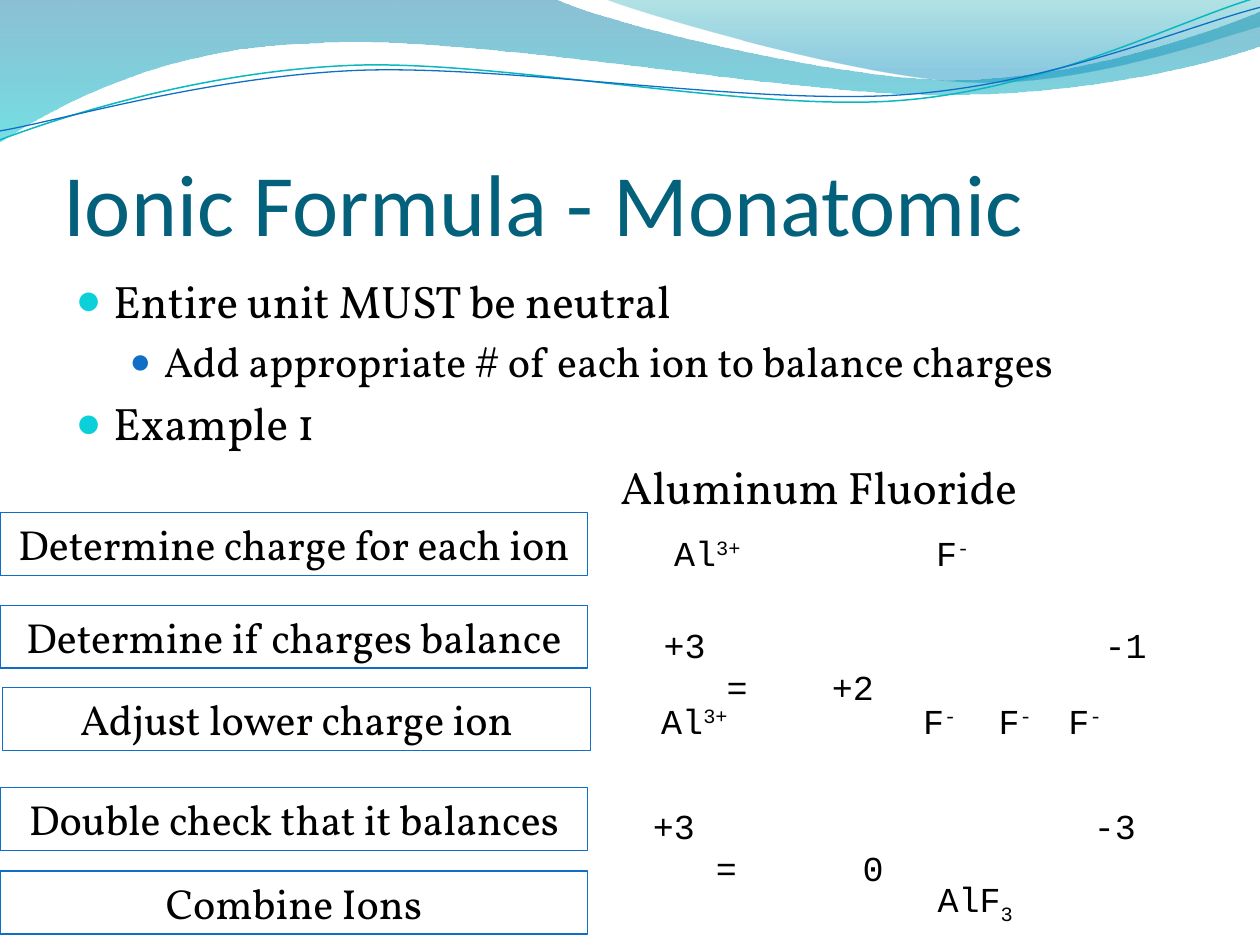
from lxml import etree
from pptx import Presentation
from pptx import util as u
from pptx.dml.color import RGBColor
from pptx.enum import shapes, text
from pptx.oxml.ns import qn

BODY_FONT, FORMULA_FONT = "Vollkorn", "Courier New"
BLACK, BLUE, TEAL, CYAN = "000000", "0F6FC6", "0AB8BF", "0BD0D9"
SUPER, SUB = 30000, -25000

# Wave outlines in cm: a start point, then one point per line or three per curve.
BROAD_WAVE = [
    [(0, 0)], [(11.18, -0.03)],
    [(12.09, 0.43), (16.87, 1.6), (19.25, 1.6)],
    [(21.67, 1.6), (24.33, 0.66), (25.4, 0.23)],
    [(25.43, 0.91)],
    [(24.97, 1.12), (22.1, 1.93), (18.95, 1.91)],
    [(15.8, 1.91), (9.7, 0.71), (6.53, 0.86)],
    [(3.28, 0.91), (1.17, 2.11), (-0.03, 2.87)],
]
RIGHT_WAVE = [
    [(12.17, -0.03)],
    [(12.93, 0.28), (17.32, 1.57), (19.53, 1.65)],
    [(21.74, 1.75), (24.41, 0.81), (25.4, 0.53)],
    [(25.4, 0)],
]
TEAL_STRAND = [
    [(0, 2.82)],
    [(1.22, 2.36), (4.01, 1.45), (7.04, 1.32)],
    [(10.03, 1.19), (15.06, 2.26), (18.11, 2.03)],
    [(21.16, 1.8), (23.83, 0.38), (25.35, -0.05)],
]
BLUE_STRAND = [
    [(0, 2.64)],
    [(1.19, 2.44), (4.17, 1.55), (7.19, 1.42)],
    [(10.24, 1.3), (15.16, 2.13), (18.21, 1.91)],
    [(21.23, 1.7), (23.9, 0.53), (25.4, 0.15)],
]


def color(value):
    return RGBColor.from_string(value)


def format_run(run, font, size, value=BLACK):
    run.font.name = font
    run.font.size = u.Pt(size)
    run.font.color.rgb = color(value)


def place(shape, left, top, width, height):
    shape.left, shape.top = u.Cm(left), u.Cm(top)
    shape.width, shape.height = u.Cm(width), u.Cm(height)


def bend(shape, segments):
    """Join the three lines of each curved segment into one cubic curve."""
    lines = iter(list(shape._element.iter(qn("a:lnTo"))))
    for segment in segments[1:]:
        group = [next(lines) for _ in segment]
        if len(group) == 3:
            curve = etree.Element(qn("a:cubicBezTo"))
            group[0].addprevious(curve)
            for line in group:
                curve.append(line[0])
                line.getparent().remove(line)


def add_outline(slide, segments, depth, close):
    """Add a freeform at the given depth, counted from the back."""
    start, *rest = [(u.Cm(x), u.Cm(y)) for segment in segments for x, y in segment]
    builder = slide.shapes.build_freeform(*start)
    builder.add_line_segments(rest, close=close)
    shape = builder.convert_to_shape()
    bend(shape, segments)
    shape.shadow.inherit = False
    slide.shapes._spTree.insert(2 + depth, shape._element)
    return shape


def add_wave(slide, segments, depth, stops):
    """Fill downwards with stops of (position, colour, opacity in percent)."""
    shape = add_outline(slide, segments, depth, close=True)
    shape.line.fill.background()
    shape.fill.gradient()
    shape.fill.gradient_angle = 270
    for stop, (position, value, _) in zip(shape.fill.gradient_stops, stops):
        stop.position = position
        stop.color.rgb = color(value)
    for element, (_, _, opacity) in zip(shape._element.iter(qn("a:srgbClr")), stops):
        etree.SubElement(element, qn("a:alpha"), val=str(opacity * 1000))


def add_strand(slide, segments, depth, value, width):
    shape = add_outline(slide, segments, depth, close=False)
    shape.fill.background()
    shape.line.color.rgb = color(value)
    shape.line.width = u.Pt(width)


def set_indent(paragraph, left, first=0):
    properties = paragraph._p.get_or_add_pPr()
    properties.set("marL", str(u.Cm(left)))
    properties.set("indent", str(u.Cm(first)))
    return properties


def set_bullet(paragraph, left, hanging, value, percent):
    properties = set_indent(paragraph, left, -hanging)
    bullet_color = etree.SubElement(properties, qn("a:buClr"))
    etree.SubElement(bullet_color, qn("a:srgbClr"), val=value)
    etree.SubElement(properties, qn("a:buSzPct"), val=str(percent * 1000))
    etree.SubElement(properties, qn("a:buChar"), char="●")


def set_tabs(paragraph, stops):
    tabs = etree.SubElement(paragraph._p.get_or_add_pPr(), qn("a:tabLst"))
    for stop in stops:
        etree.SubElement(tabs, qn("a:tab"), pos=str(u.Cm(stop)), algn="l")


def fill_title(title):
    place(title, 1.27, 1.95, 22.86, 3.18)
    frame = title.text_frame
    frame.text = "Ionic Formula - Monatomic"
    frame.vertical_anchor = text.MSO_ANCHOR.BOTTOM
    frame.margin_left = frame.margin_right = frame.margin_bottom = 0
    frame.paragraphs[0].alignment = text.PP_ALIGN.LEFT
    format_run(frame.paragraphs[0].runs[0], "Calibri", 50, "04617B")


def fill_body(body):
    place(body, 1.27, 5.37, 22.86, 12.19)
    lines = [("Entire unit MUST be neutral", 0),
             ("Add appropriate # of each ion to balance charges", 1),
             ("Example 1", 0), ("Aluminum Fluoride", 0)]
    body.text_frame.text = "\n".join(line for line, _ in lines)
    paragraphs = body.text_frame.paragraphs
    for paragraph, (_, level) in zip(paragraphs, lines):
        paragraph.level = level
        format_run(paragraph.runs[0], BODY_FONT, 24 if level else 26)
    for paragraph in paragraphs[:3]:
        if paragraph.level:
            set_bullet(paragraph, 1.78, 0.69, BLUE, 85)
        else:
            set_bullet(paragraph, 0.76, 0.76, CYAN, 95)
    compound = paragraphs[3]
    compound.alignment = text.PP_ALIGN.CENTER
    etree.SubElement(set_indent(compound, 7.62), qn("a:buNone"))


def add_step(slide, label, left, top):
    shape = slide.shapes.add_shape(shapes.MSO_SHAPE.RECTANGLE, u.Cm(left), u.Cm(top),
                                   u.Cm(11.85), u.Cm(1.27))
    shape.shadow.inherit = False
    shape.fill.background()
    shape.line.color.rgb = color(BLUE)
    shape.line.width = u.Pt(0.75)
    shape.text_frame.text = label
    shape.text_frame.word_wrap = True
    shape.text_frame.auto_size = text.MSO_AUTO_SIZE.SHAPE_TO_FIT_TEXT
    paragraph = shape.text_frame.paragraphs[0]
    paragraph.alignment = text.PP_ALIGN.CENTER
    format_run(paragraph.runs[0], BODY_FONT, 24)


def add_formula(slide, left, top, width, lines):
    """Write lines of (text, baseline) parts and return their paragraphs."""
    box = slide.shapes.add_textbox(u.Cm(left), u.Cm(top), u.Cm(width), u.Cm(1.12))
    frame = box.text_frame
    frame.word_wrap = True
    frame.auto_size = text.MSO_AUTO_SIZE.SHAPE_TO_FIT_TEXT
    for index, parts in enumerate(lines):
        paragraph = frame.add_paragraph() if index else frame.paragraphs[0]
        for content, baseline in parts:
            run = paragraph.add_run()
            run.text = content
            format_run(run, FORMULA_FONT, 20)
            if baseline:
                run._r.get_or_add_rPr().set("baseline", str(baseline))
    return frame.paragraphs


def add_balance(slide, left, top, negative, total, total_tab):
    charges, result = add_formula(slide, left, top, 11.43, [
        [(f"+3\t{negative}", 0)], [(f"\t=\t{total}", 0)]])
    set_tabs(charges, [8.89])
    set_tabs(result, [1.27, total_tab])


def main():
    presentation = Presentation()
    presentation.slide_width, presentation.slide_height = u.Cm(25.4), u.Cm(19.05)
    slide = presentation.slides.add_slide(presentation.slide_layouts[1])

    add_wave(slide, BROAD_WAVE, 0, [(0, "0074A1", 45), (1, "00C6CF", 55)])
    add_wave(slide, RIGHT_WAVE, 1, [(0, "00A1A9", 30), (0.8, "008BBF", 45)])
    add_strand(slide, TEAL_STRAND, 2, TEAL, 0.85)
    add_strand(slide, BLUE_STRAND, 3, BLUE, 0.75)
    fill_title(slide.shapes.title)
    fill_body(slide.placeholders[1])

    aluminum = [("Al", 0), ("3+", SUPER)]
    fluoride = [("F", 0), ("-", SUPER)]
    add_formula(slide, 13.34, 10.59, 2.34, [aluminum])
    add_formula(slide, 18.62, 10.59, 2.34, [fluoride])
    add_step(slide, "Determine charge for each ion", 0, 10.33)
    add_balance(slide, 13.13, 12.45, "-1", "+2", 3.39)
    add_step(slide, "Determine if charges balance", 0, 12.2)
    add_step(slide, "Adjust lower charge ion", 0.05, 13.86)
    add_formula(slide, 13.08, 13.97, 2.34, [aluminum])
    ions = add_formula(slide, 18.36, 13.97, 4.5,
                       [fluoride + [("\tF", 0), ("-", SUPER)] * 2])
    set_tabs(ions[0], [1.52, 2.93])
    add_balance(slide, 12.91, 16.09, "-3", "0", 4.23)
    add_step(slide, "Double check that it balances", 0, 15.87)
    add_step(slide, "Combine Ions", 0, 17.56)
    product = add_formula(slide, 13.13, 17.56, 11.43, [[("AlF", 0), ("3", SUB)]])
    set_indent(product[0], 5.52)

    presentation.save("out.pptx")


if __name__ == "__main__":
    main()
